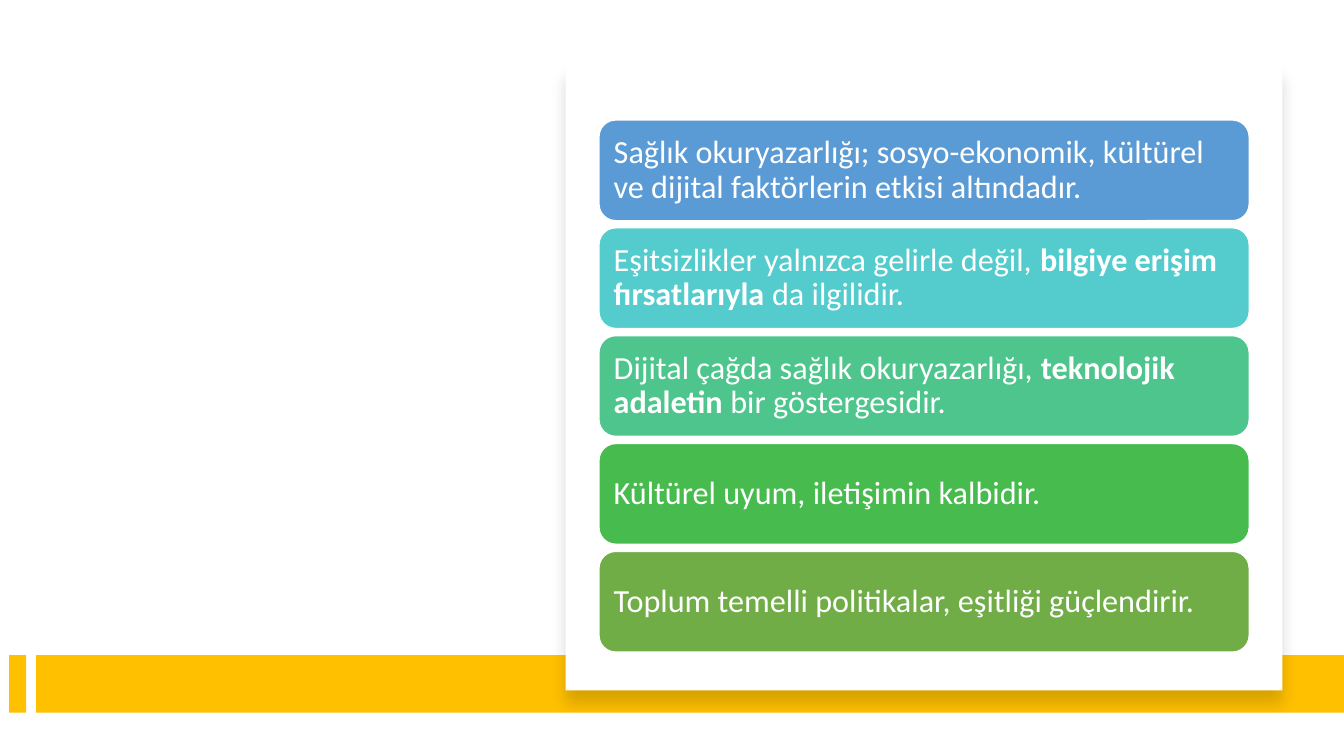
from dataclasses import dataclass

from lxml import etree
from pptx import Presentation
from pptx.dml.color import RGBColor
from pptx.enum.shapes import MSO_SHAPE
from pptx.enum.text import MSO_ANCHOR, PP_ALIGN
from pptx.oxml.ns import qn
from pptx.util import Inches, Pt

RECTANGLE = MSO_SHAPE.RECTANGLE
ROUNDED = MSO_SHAPE.ROUNDED_RECTANGLE
MIDDLE = MSO_ANCHOR.MIDDLE
LEFT = PP_ALIGN.LEFT


@dataclass(frozen=True)
class Theme:
    font: str = "Calibri"
    size: int = 23
    white: str = "FFFFFF"
    shadow: str = "000000"
    band: str = "FFC000"


THEME = Theme()

MESSAGES = [
    ("5B9BD5", [("Sağlık okuryazarlığı; sosyo-ekonomik, kültürel ve dijital "
                 "faktörlerin etkisi altındadır.", False)]),
    ("54CCCD", [("Eşitsizlikler yalnızca gelirle değil, ", False),
                ("bilgiye erişim fırsatlarıyla", True),
                (" da ilgilidir.", False)]),
    ("4DC58D", [("Dijital çağda sağlık okuryazarlığı, ", False),
                ("teknolojik adaletin", True),
                (" bir göstergesidir.", False)]),
    ("48BB4F", [("Kültürel uyum, iletişimin kalbidir.", False)]),
    ("70AD47", [("Toplum temelli politikalar, eşitliği güçlendirir.", False)]),
]


def add_block(page, kind, left, top, width, height, color):
    block = page.shapes.add_shape(
        kind, Inches(left), Inches(top), Inches(width), Inches(height))
    block.shadow.inherit = False
    block.fill.solid()
    block.fill.fore_color.rgb = RGBColor.from_string(color)
    block.line.fill.background()
    return block


def add_shadow(block):
    effects = block._element.spPr.find(qn("a:effectLst"))
    shadow = etree.SubElement(
        effects, qn("a:outerShdw"), blurRad=str(Pt(11)), dist=str(Pt(10)),
        dir="5400000", algn="t", rotWithShape="0")
    color = etree.SubElement(shadow, qn("a:srgbClr"), val=THEME.shadow)
    etree.SubElement(color, qn("a:alpha"), val="15000")


def add_band(page, left, top, width, height):
    tick_width, bar_offset = 0.17, 0.27
    add_block(page, RECTANGLE, left, top, tick_width, height, THEME.band)
    add_block(page, RECTANGLE, left + bar_offset, top, width - bar_offset,
              height, THEME.band)


def add_message(page, left, top, width, height, color, spans):
    box = add_block(page, ROUNDED, left, top, width, height, color)
    box.line.color.rgb = RGBColor.from_string(THEME.white)
    box.line.width = Pt(1)
    frame = box.text_frame
    frame.word_wrap = True
    frame.vertical_anchor = MIDDLE
    frame.margin_left = frame.margin_right = Inches(0.1)
    frame.margin_top = frame.margin_bottom = Inches(0.1)
    para = frame.paragraphs[0]
    para.alignment = LEFT
    para.line_spacing = 0.9
    for text, bold in spans:
        span = para.add_run()
        span.text = text
        span.font.name = THEME.font
        span.font.size = Pt(THEME.size)
        span.font.bold = bold
        span.font.color.rgb = RGBColor.from_string(THEME.white)


def add_card(page, left, top, width, height):
    card = add_block(page, RECTANGLE, left, top, width, height, THEME.white)
    add_shadow(card)
    side, head, pitch, box_height = 0.33, 0.55, 1.07, 1
    for row, (color, spans) in enumerate(MESSAGES):
        add_message(page, left + side, top + head + row * pitch,
                    width - 2 * side, box_height, color, spans)


def main():
    deck = Presentation()
    deck.slide_width = Inches(13.33)
    deck.slide_height = Inches(7.5)
    page = deck.slides.add_slide(deck.slide_layouts[6])
    add_band(page, 0.09, 6.5, 13.24, 0.57)
    add_card(page, 5.61, 0.64, 7.11, 6.21)
    deck.save("out.pptx")


if __name__ == "__main__":
    main()
